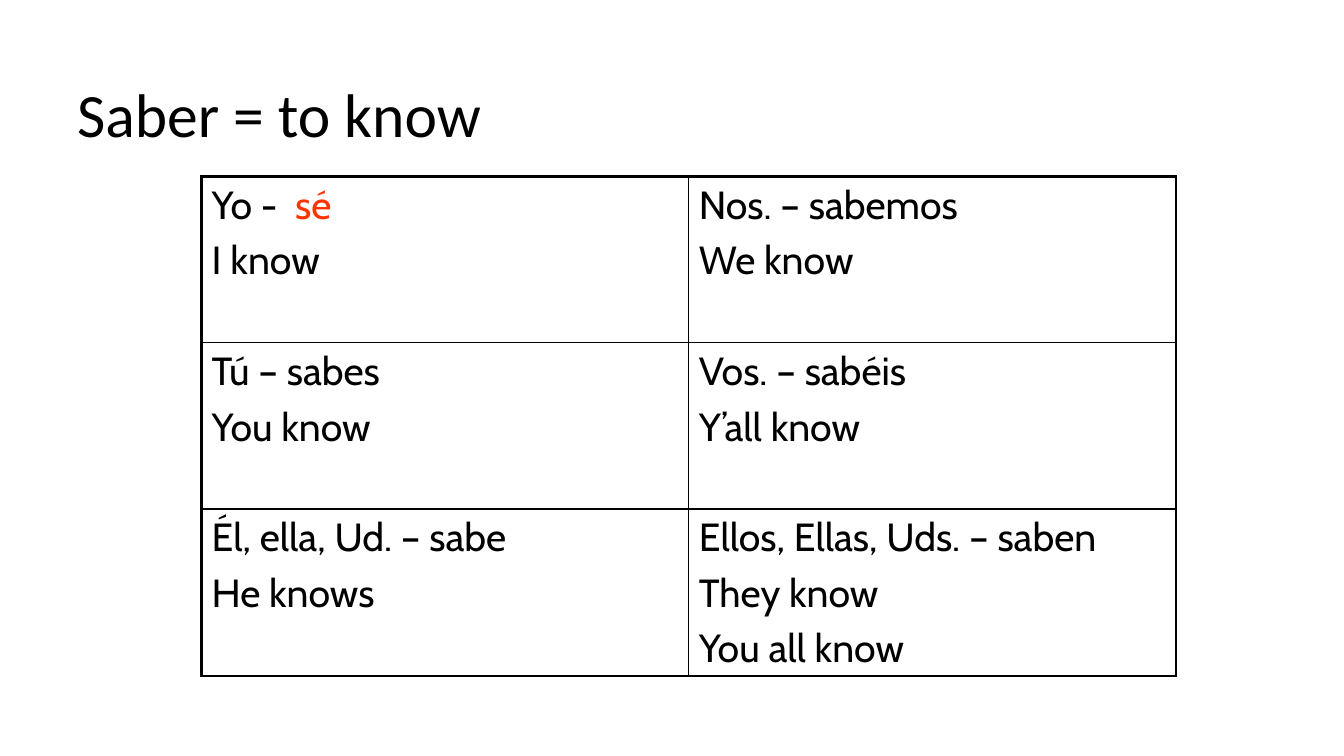
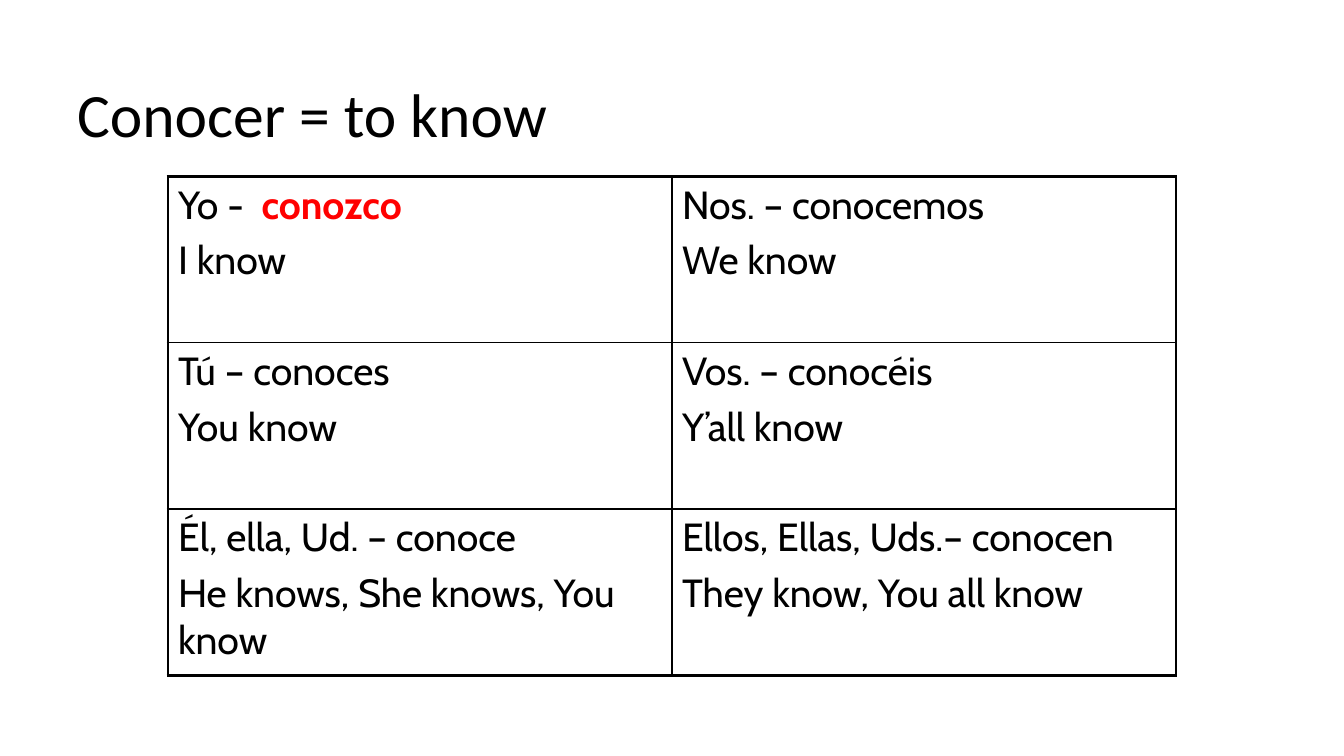
from lxml import etree
from pptx import Presentation
from pptx import util as u
from pptx.dml.color import RGBColor
from pptx.enum import text
from pptx.oxml import ns

# Content: each cell is a list of paragraphs; a pair adds a highlighted word
LESSONS = [
    {
        "title": "Saber = to know",
        "left": 0.15,
        "highlight": {"color": "FF3300", "bold": False},
        "rows": [
            ([("Yo -  ", "sé"), "I know"],
             ["Nos. – sabemos", "We know"]),
            (["Tú – sabes", "You know"],
             ["Vos. – sabéis", "Y’all know"]),
            (["Él, ella, Ud. – sabe", "He knows"],
             ["Ellos, Ellas, Uds. – saben", "They know", "You all know"]),
        ],
    },
    {
        "title": "Conocer = to know",
        "left": 0.125,
        "highlight": {"color": "FF0000", "bold": True},
        "rows": [
            ([("Yo -  ", "conozco"), "I know"],
             ["Nos. – conocemos", "We know"]),
            (["Tú – conoces", "You know"],
             ["Vos. – conocéis", "Y’all know"]),
            (["Él, ella, Ud. – conoce", "He knows, She knows, You know"],
             ["Ellos, Ellas, Uds.– conocen", "They know, You all know"]),
        ],
    },
]

# Shared style
WIDTH, HEIGHT = u.Inches(13.33), u.Inches(7.5)
TABLE_TOP, ROW_HEIGHT = u.Inches(1.75), u.Inches(1.65)
TABLE_RIGHT = 0.875
INK = "000000"
TITLE_FONT, TITLE_SIZE = "Calibri", 44
BODY_FONT, BODY_SIZE = "Cabin", 28
OUTER_LINE, INNER_LINE = 2.25, 1


def rgb(color):
    return RGBColor.from_string(color)


def add_span(para, words, font, size, color=INK, bold=False):
    span = para.add_run()
    span.text = words
    span.font.name = font
    span.font.size = u.Pt(size)
    span.font.bold = bold
    span.font.color.rgb = rgb(color)


def add_title(page, words):
    box = page.shapes.add_textbox(WIDTH * 0.05, u.Inches(0.42),
                                  WIDTH * 0.9, HEIGHT * 0.2)
    frame = box.text_frame
    frame.word_wrap = True
    frame.vertical_anchor = text.MSO_ANCHOR.MIDDLE
    para = frame.paragraphs[0]
    para.line_spacing = 0.9
    add_span(para, words, TITLE_FONT, TITLE_SIZE)


def set_borders(cell, widths):
    """Draw the cell's left, right, top and bottom lines."""
    props = cell._tc.get_or_add_tcPr()
    for place, (side, points) in enumerate(zip("LRTB", widths)):
        line = etree.Element(ns.qn(f"a:ln{side}"), w=str(u.Pt(points)))
        fill = etree.SubElement(line, ns.qn("a:solidFill"))
        etree.SubElement(fill, ns.qn("a:srgbClr"), val=INK)
        props.insert(place, line)


def fill_cell(cell, lines, highlight):
    cell.fill.background()
    frame = cell.text_frame
    for number, line in enumerate(lines):
        para = frame.add_paragraph() if number else frame.paragraphs[0]
        para.space_before = u.Pt(BODY_SIZE * 0.2)
        plain, marked = line if isinstance(line, tuple) else (line, None)
        add_span(para, plain, BODY_FONT, BODY_SIZE)
        if marked:
            add_span(para, marked, BODY_FONT, BODY_SIZE, **highlight)


def add_conjugation(page, lesson):
    rows = lesson["rows"]
    row_count, column_count = len(rows), len(rows[0])
    table = page.shapes.add_table(
        row_count, column_count, int(WIDTH * lesson["left"]), TABLE_TOP,
        int(WIDTH * (TABLE_RIGHT - lesson["left"])),
        ROW_HEIGHT * row_count).table
    table.first_row = table.horz_banding = False
    for r, row in enumerate(rows):
        for c, lines in enumerate(row):
            cell = table.cell(r, c)
            fill_cell(cell, lines, lesson["highlight"])
            on_edge = (c == 0, c == column_count - 1,
                       r == 0, r == row_count - 1)
            set_borders(cell, [OUTER_LINE if edge else INNER_LINE
                               for edge in on_edge])


def main():
    deck = Presentation()
    deck.slide_width, deck.slide_height = WIDTH, HEIGHT
    blank = deck.slide_layouts[6]
    for lesson in LESSONS:
        page = deck.slides.add_slide(blank)
        add_title(page, lesson["title"])
        add_conjugation(page, lesson)
    deck.save("out.pptx")


if __name__ == "__main__":
    main()
